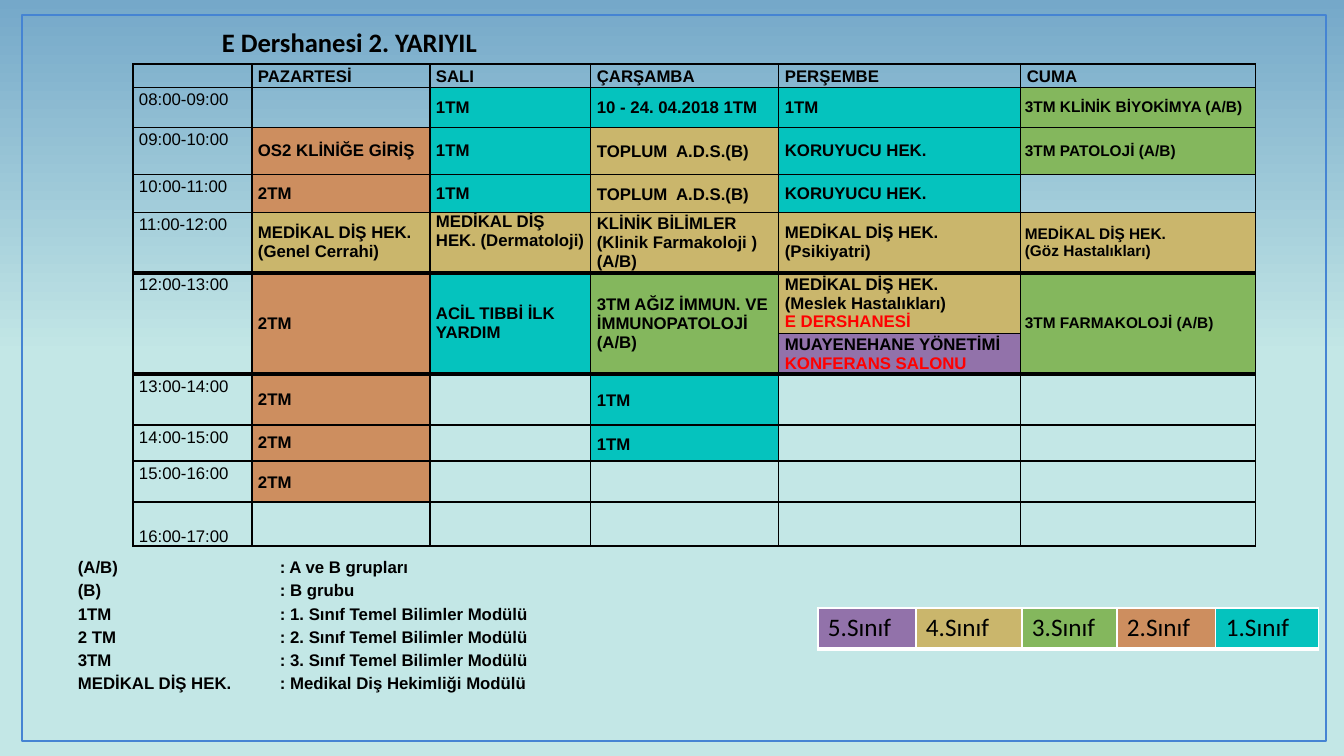
"""Builds the weekly timetable slide of classroom E for the second term."""
from dataclasses import dataclass
from typing import Any, Optional

from lxml.etree import SubElement
from pptx import Presentation
from pptx.dml.color import RGBColor
from pptx.enum.shapes import MSO_SHAPE
from pptx.enum.text import MSO_ANCHOR, MSO_AUTO_SIZE
from pptx.oxml.ns import qn
from pptx.slide import Slide
from pptx.table import Table, _Cell
from pptx.text.text import TextFrame, _Paragraph
from pptx.util import Emu, Pt

EMU_PER_PX = 914400 / 100.8


@dataclass(frozen=True)
class Theme:
    grades: tuple[str, ...] = ("05C3BE", "CD8E5F", "84B75D", "CAB66C", "9272AA")
    ink: str = "000000"
    white: str = "FFFFFF"
    venue: str = "FF0000"
    frame: str = "4584D3"
    sky: str = "75A8C9"
    ground: str = "C3E7E6"
    heading_font: str = "Calibri"
    body_font: str = "Arial"
    title_size: int = 19
    legend_size: int = 18
    body_size: int = 12
    friday_size: int = 11
    loose: float = 1.15
    thin: int = 1
    thick: int = 3


THEME = Theme()


@dataclass(frozen=True)
class Lesson:
    text: str
    grade: int
    venue: str = ""
    spacing: float = 1.0
    anchor: MSO_ANCHOR = MSO_ANCHOR.MIDDLE


@dataclass(frozen=True)
class Hour:
    label: str
    height: int
    lessons: tuple[Optional[Lesson], ...] = (None,) * 5


@dataclass(frozen=True)
class Box:
    left: int
    top: int
    width: int
    height: int

    def emu(self) -> tuple[Emu, ...]:
        return tuple(px(n) for n in (self.left, self.top, self.width, self.height))


FIRST = Lesson("1TM", 1)
FIRST_LOOSE = Lesson("1TM", 1, spacing=THEME.loose)
SECOND = Lesson("2TM", 2)
SECOND_LOOSE = Lesson("2TM", 2, spacing=THEME.loose)
COMMUNITY = Lesson("TOPLUM  A.D.S.(B)", 4, spacing=THEME.loose)
PREVENTIVE = Lesson("KORUYUCU HEK.", 1)

DAYS = ("", "PAZARTESİ", "SALI", "ÇARŞAMBA", "PERŞEMBE", "CUMA")
DAY_WIDTHS = (119, 178, 161, 188, 242, 235)
HEADER_HEIGHT = 22
THURSDAY, FRIDAY = 4, 5
NOON, NOON_END = 5, 6
HOURS = (
    Hour("08:00-09:00", 40, (None, FIRST, Lesson("10 - 24. 04.2018 1TM", 1), FIRST,
                             Lesson("3TM KLİNİK BİYOKİMYA (A/B)", 3))),
    Hour("09:00-10:00", 47, (Lesson("OS2 KLİNİĞE GİRİŞ", 2), FIRST, COMMUNITY, PREVENTIVE,
                             Lesson("3TM PATOLOJİ (A/B)", 3))),
    Hour("10:00-11:00", 38, (SECOND, FIRST, COMMUNITY, PREVENTIVE, None)),
    Hour("11:00-12:00", 60, (
        Lesson("MEDİKAL DİŞ HEK. (Genel Cerrahi)", 4),
        Lesson("MEDİKAL DİŞ HEK. (Dermatoloji)", 4, anchor=MSO_ANCHOR.TOP),
        Lesson("KLİNİK BİLİMLER (Klinik Farmakoloji )\n(A/B)", 4),
        Lesson("MEDİKAL DİŞ HEK. (Psikiyatri)", 4),
        Lesson("MEDİKAL DİŞ HEK.\n(Göz Hastalıkları)", 4))),
    Hour("12:00-13:00", 61, (
        SECOND,
        Lesson("ACİL TIBBİ İLK YARDIM", 1),
        Lesson("3TM AĞIZ İMMUN. VE İMMUNOPATOLOJİ (A/B)", 3),
        Lesson("MEDİKAL DİŞ HEK.\n(Meslek Hastalıkları)", 4, "E DERSHANESİ"),
        Lesson("3TM FARMAKOLOJİ (A/B)", 3))),
    Hour("", 40, (None, None, None,
                  Lesson("MUAYENEHANE YÖNETİMİ", 5, "KONFERANS SALONU"), None)),
    Hour("13:00-14:00", 51, (SECOND, None, FIRST_LOOSE, None, None)),
    Hour("14:00-15:00", 36, (SECOND, None, FIRST_LOOSE, None, None)),
    Hour("15:00-16:00", 41, (SECOND_LOOSE, None, None, None, None)),
    Hour("16:00-17:00", 44),
)
LEGEND_WIDTHS = (98, 106, 95, 99, 103)
ABBREVIATIONS = (
    ("(A/B)", "A ve B grupları"),
    ("(B)", "B grubu"),
    ("1TM", "1. Sınıf Temel Bilimler Modülü"),
    ("2 TM", "2. Sınıf Temel Bilimler Modülü"),
    ("3TM", "3. Sınıf Temel Bilimler Modülü"),
    ("MEDİKAL DİŞ HEK.", "Medikal Diş Hekimliği Modülü"),
)


def px(length: int) -> Emu:
    return Emu(round(length * EMU_PER_PX))


def rgb(colour: str) -> RGBColor:
    return RGBColor.from_string(colour)


def apply(target: Any, values: dict[str, Any]) -> None:
    for attribute, value in values.items():
        setattr(target, attribute, value)


def write(text_frame: TextFrame, lines: list[str], size: int, font: str = THEME.body_font,
          bold: bool = True, spacing: float = 1.0, venue: str = "") -> list[_Paragraph]:
    paragraphs = []
    for index, line in enumerate(lines + [venue] * bool(venue)):
        paragraph = text_frame.add_paragraph() if index else text_frame.paragraphs[0]
        paragraph.line_spacing = spacing
        run = paragraph.add_run()
        run.text = line
        apply(run.font, {"name": font, "size": Pt(size), "bold": bold})
        run.font.color.rgb = rgb(THEME.venue if index == len(lines) else THEME.ink)
        paragraphs.append(paragraph)
    return paragraphs


def format_cell(cell: _Cell, borders: dict[str, int], line: str, fill: Optional[str],
                side: int, end: int) -> None:
    apply(cell, {"margin_left": px(side), "margin_right": px(side),
                 "margin_top": px(end), "margin_bottom": px(end)})
    properties = cell._tc.get_or_add_tcPr()
    for edge, weight in borders.items():
        border = SubElement(properties, qn(f"a:ln{edge}"), w=str(Pt(weight)))
        SubElement(SubElement(border, qn("a:solidFill")), qn("a:srgbClr"), val=line)
    if fill:
        cell.fill.solid()
        cell.fill.fore_color.rgb = rgb(fill)
    else:
        cell.fill.background()


def add_grid(slide: Slide, left: int, top: int, widths: tuple[int, ...],
             heights: tuple[int, ...]) -> Table:
    box = Box(left, top, sum(widths), sum(heights))
    grid = slide.shapes.add_table(len(heights), len(widths), *box.emu()).table
    apply(grid, {"first_row": False, "horz_banding": False})
    for column, width in zip(grid.columns, widths):
        column.width = px(width)
    for row, height in zip(grid.rows, heights):
        row.height = px(height)
    return grid


def add_backdrop(slide: Slide) -> None:
    sky = slide.background.fill
    sky.gradient()
    sky.gradient_angle = 90
    for stop, position, colour in zip(sky.gradient_stops, (0.53, 1.0), (THEME.ground, THEME.sky)):
        stop.position = position
        stop.color.rgb = rgb(colour)
    frame = slide.shapes.add_shape(MSO_SHAPE.RECTANGLE, *Box(22, 15, 1304, 726).emu())
    frame.shadow.inherit = False
    frame.fill.background()
    frame.line.color.rgb = rgb(THEME.frame)
    frame.line.width = Pt(1.5)


def add_text(slide: Slide, box: Box, wrap: bool) -> TextFrame:
    text_frame = slide.shapes.add_textbox(*box.emu()).text_frame
    apply(text_frame, {"word_wrap": wrap, "auto_size": MSO_AUTO_SIZE.SHAPE_TO_FIT_TEXT})
    return text_frame


def add_legend(slide: Slide) -> None:
    legend = add_grid(slide, 818, 608, LEGEND_WIDTHS, (41,))
    borders = {"L": THEME.thin, "R": THEME.thin, "T": THEME.thin, "B": THEME.thick}
    for column, grade in enumerate(range(5, 0, -1)):
        cell = legend.cell(0, column)
        format_cell(cell, borders, THEME.white, THEME.grades[grade - 1], 10, 5)
        write(cell.text_frame, [f"{grade}.Sınıf"], THEME.legend_size, THEME.heading_font, False)


def add_timetable(slide: Slide) -> None:
    heights = (HEADER_HEIGHT, *(hour.height for hour in HOURS))
    timetable = add_grid(slide, 133, 64, DAY_WIDTHS, heights)
    labels = [Hour("", HEADER_HEIGHT), *HOURS]
    for row, hour in enumerate(labels):
        for column, day in enumerate(DAYS):
            cell = timetable.cell(row, column)
            lesson = hour.lessons[column - 1] if row and column else None
            spans_noon = row == NOON and column != THURSDAY
            above = row in (NOON, NOON_END + 1)
            below = row in (NOON - 1, NOON_END) or spans_noon
            borders = {"L": THEME.thin, "R": THEME.thin,
                       "T": THEME.thick if above else THEME.thin,
                       "B": THEME.thick if below else THEME.thin}
            friday = bool(lesson) and column == FRIDAY
            fill = THEME.grades[lesson.grade - 1] if lesson else None
            format_cell(cell, borders, THEME.ink, fill, 4 if friday else 6, 0)
            label = day if row == 0 else hour.label if column == 0 else ""
            if lesson:
                cell.vertical_anchor = lesson.anchor
                size = THEME.friday_size if friday else THEME.body_size
                write(cell.text_frame, lesson.text.split("\n"), size,
                      spacing=lesson.spacing, venue=lesson.venue)
            elif label:
                last = row == len(HOURS)
                cell.vertical_anchor = MSO_ANCHOR.BOTTOM if last else MSO_ANCHOR.TOP
                write(cell.text_frame, [label], THEME.body_size, bold=row == 0,
                      spacing=THEME.loose)
            else:
                SubElement(cell.text_frame.paragraphs[0]._p, qn("a:endParaRPr"),
                           sz=str(THEME.body_size * 100))
    for column in range(len(DAYS)):
        if column != THURSDAY:
            timetable.cell(NOON, column).merge(timetable.cell(NOON_END, column))


def add_abbreviations(slide: Slide) -> None:
    lines = [f"{term}\t: {meaning}" for term, meaning in ABBREVIATIONS]
    notes = add_text(slide, Box(68, 549, 672, 150), True)
    for paragraph in write(notes, lines, THEME.body_size, spacing=THEME.loose):
        stops = SubElement(paragraph._p.get_or_add_pPr(), qn("a:tabLst"))
        SubElement(stops, qn("a:tab"), pos=str(px(202)), algn="l")


def main() -> None:
    deck = Presentation()
    apply(deck, {"slide_width": px(1344), "slide_height": px(756)})
    slide = deck.slides.add_slide(deck.slide_layouts[6])
    add_backdrop(slide)
    title = add_text(slide, Box(212, 21, 279, 42), False)
    write(title, ["E Dershanesi 2. YARIYIL"], THEME.title_size, THEME.heading_font)
    add_legend(slide)
    add_timetable(slide)
    add_abbreviations(slide)
    deck.save("out.pptx")


if __name__ == "__main__":
    main()
